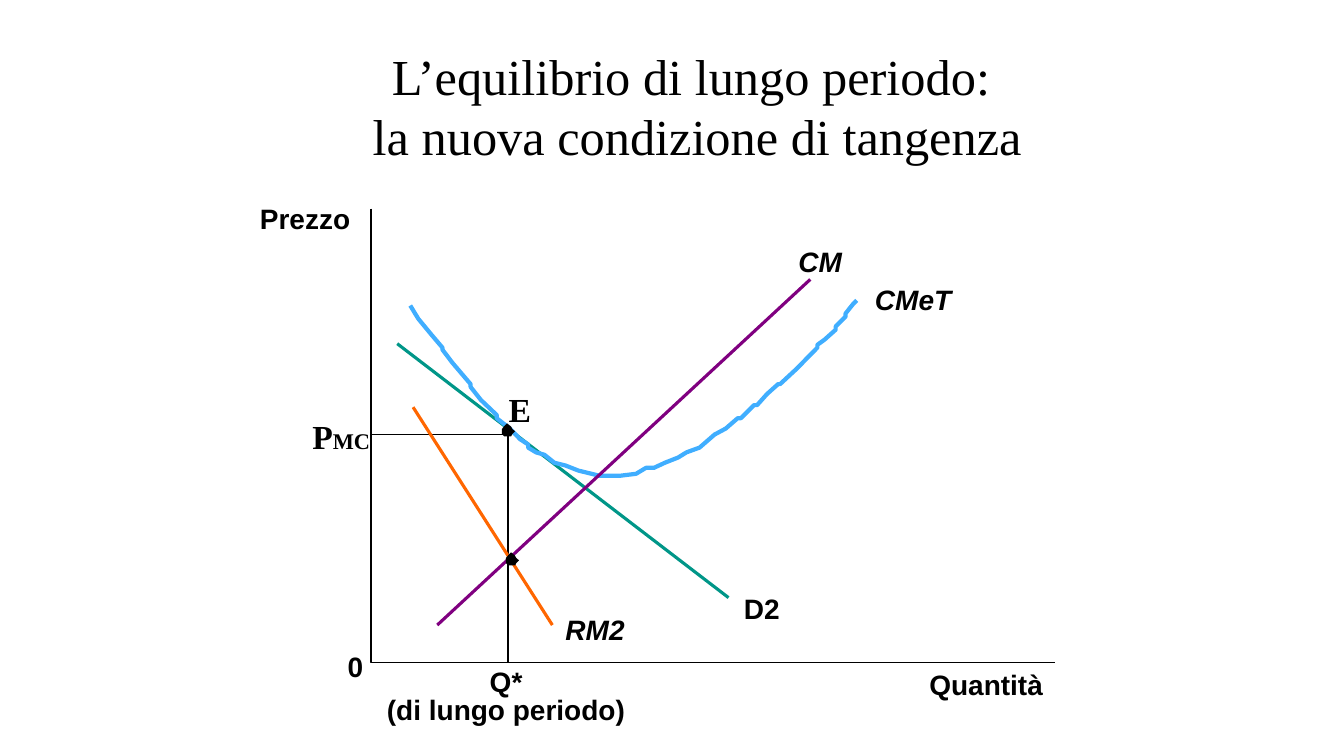
"""Build the slide on long-run equilibrium and the tangency condition."""
from dataclasses import dataclass

from lxml.etree import SubElement
from pptx import Presentation
from pptx.dml.color import RGBColor
from pptx.enum.shapes import MSO_CONNECTOR
from pptx.enum.text import MSO_ANCHOR, MSO_AUTO_SIZE, PP_ALIGN
from pptx.oxml.ns import qn
from pptx.util import Cm, Pt


@dataclass(frozen=True)
class Theme:
    black: RGBColor = RGBColor(0x00, 0x00, 0x00)
    demand: RGBColor = RGBColor(0x00, 0x96, 0x88)
    revenue: RGBColor = RGBColor(0xFF, 0x66, 0x00)
    average_cost: RGBColor = RGBColor(0x40, 0xAE, 0xFF)
    marginal_cost: RGBColor = RGBColor(0x80, 0x00, 0x80)
    sans: str = "Arial"
    serif: str = "Times New Roman"
    title_size: int = 36
    point_size: int = 24
    label_size: int = 20
    small_size: int = 16


theme = Theme()
presentation = Presentation()
presentation.slide_width = Cm(33.87)
presentation.slide_height = Cm(19.05)
slide = presentation.slides.add_slide(presentation.slide_layouts[6])


def add_text(box, lines, frame_format, paragraph_format, font_format):
    """Add a text box; each line is a list of (text, size) runs, with \\n as a line break."""
    frame = slide.shapes.add_textbox(*map(Cm, box)).text_frame
    for name, value in frame_format.items():
        setattr(frame, name, value)
    for index, runs in enumerate(lines):
        paragraph = frame.add_paragraph() if index else frame.paragraphs[0]
        for name, value in paragraph_format.items():
            setattr(paragraph, name, value)
        for text, size in runs:
            for part_index, part in enumerate(text.split("\n")):
                if part_index:
                    paragraph.add_line_break()
                run = paragraph.add_run()
                run.text = part
                run.font.size = Pt(size)
                run.font.color.rgb = theme.black
                for name, value in font_format.items():
                    setattr(run.font, name, value)


def add_outline(points, close):
    """Add a freeform through points given in centimetres."""
    units = [(x * 100, y * 100) for x, y in points]
    builder = slide.shapes.build_freeform(*units[0], scale=Cm(0.01))
    builder.add_line_segments(units[1:], close=close)
    shape = builder.convert_to_shape()
    shape.shadow.inherit = False
    return shape


add_text(
    (6.78, 1.07, 21.59, 3.18),
    [[("L’equilibrio di lungo periodo: \nla nuova condizione di tangenza", theme.title_size)]],
    {"word_wrap": True, "vertical_anchor": MSO_ANCHOR.MIDDLE},
    {"alignment": PP_ALIGN.CENTER},
    {"name": theme.serif},
)

grow = {"word_wrap": False, "auto_size": MSO_AUTO_SIZE.SHAPE_TO_FIT_TEXT}
tight = grow | dict.fromkeys(("margin_left", "margin_top", "margin_right", "margin_bottom"), 0)
label_font = {"name": theme.sans, "bold": True}
add_text(
    (9.73, 16.87, 6.05, 1.45),
    [[("Q*", theme.label_size)], [("(di lungo periodo)", theme.label_size)]],
    tight,
    {"alignment": PP_ALIGN.CENTER, "line_spacing": 0.85},
    label_font,
)
labels = [
    ("Prezzo", 6.55, 5.08, 2.29, False),
    ("Quantità", 23.42, 16.81, 2.9, False),
    ("0", 8.76, 16.36, 0.41, False),
    ("D2", 18.75, 14.91, 0.91, False),
    ("RM2", 14.25, 15.44, 1.5, True),
    ("CMeT", 22.05, 7.11, 1.93, True),
    ("CM", 20.12, 6.17, 1.12, True),
]
for text, left, top, width, italic in labels:
    add_text((left, top, width, 0.86), [[(text, theme.label_size)]],
             tight, {}, label_font | {"italic": italic})

origin_x, origin_y = 9.35, 16.69
price, quantity = 10.95, 12.8
axes = [(origin_x, 5.26), (origin_x, origin_y), (26.59, origin_y)]
guides = [(origin_x, price), (quantity, price), (quantity, origin_y)]
demand = [(10.01, 8.66), (18.36, 15.06)]
revenue = [(10.41, 10.26), (13.92, 15.75)]
marginal_cost = [(20.42, 7.04), (11.02, 15.75)]
average_cost = [
    (10.34, 7.7), (10.54, 8.03), (10.87, 8.43), (11.15, 8.76), (11.15, 8.81),
    (11.4, 9.14), (11.86, 9.68), (11.86, 9.75), (12.12, 10.08), (12.52, 10.46),
    (12.52, 10.54), (12.85, 10.8), (13.11, 11.07), (13.31, 11.2), (13.31, 11.28),
    (13.51, 11.4), (13.72, 11.46), (13.97, 11.66), (14.25, 11.73), (14.58, 11.86),
    (14.91, 11.94), (15.11, 11.99), (15.62, 11.99), (16.03, 11.94), (16.28, 11.79),
    (16.48, 11.79), (16.76, 11.66), (17.09, 11.53), (17.3, 11.4), (17.63, 11.28),
    (18.01, 10.95), (18.29, 10.8), (18.59, 10.54), (18.67, 10.54), (19, 10.21),
    (19.08, 10.21), (19.33, 9.93), (19.61, 9.68), (19.66, 9.68), (20.07, 9.3),
    (20.6, 8.76), (20.6, 8.69), (20.78, 8.56), (21.06, 8.31), (21.06, 8.23),
    (21.31, 7.98), (21.31, 7.9), (21.51, 7.65), (21.59, 7.57),
]

strokes = [
    (axes, theme.black, 1),
    (guides, theme.black, 1),
    (demand, theme.demand, 2.25),
    (revenue, theme.revenue, 2.25),
    (average_cost, theme.average_cost, 3),
    (marginal_cost, theme.marginal_cost, 2.25),
]
for points, color, width in strokes:
    if len(points) == 2:
        ends = [Cm(value) for point in points for value in point]
        shape = slide.shapes.add_connector(MSO_CONNECTOR.STRAIGHT, *ends)
    else:
        shape = add_outline(points, False)
        shape.fill.background()
    shape.line.color.rgb = color
    shape.line.width = Pt(width)
    if len(points) == 2:
        SubElement(shape.element.spPr, qn("a:effectLst"))

dot_outline = [
    (0.13, 0.33), (0.23, 0.33), (0.26, 0.27), (0.33, 0.2), (0.26, 0.14), (0.23, 0.08),
    (0.13, 0), (0.06, 0.07), (0, 0.14), (0, 0.27), (0.06, 0.33),
]
for left, top in [(12.65, 10.67), (12.75, 13.92)]:
    dot = add_outline([(left + x, top + y) for x, y in dot_outline], True)
    dot.fill.solid()
    dot.fill.fore_color.rgb = theme.black
    dot.line.fill.background()

point_labels = [
    ((12.57, 9.68, 1.09, 1.27), [("E", theme.point_size)]),
    ((7.62, 10.36, 1.98, 1.27), [("P", theme.point_size), ("MC", theme.small_size)]),
]
for box, runs in point_labels:
    add_text(box, [runs], grow, {}, {"name": theme.serif, "bold": True})

presentation.save("out.pptx")
